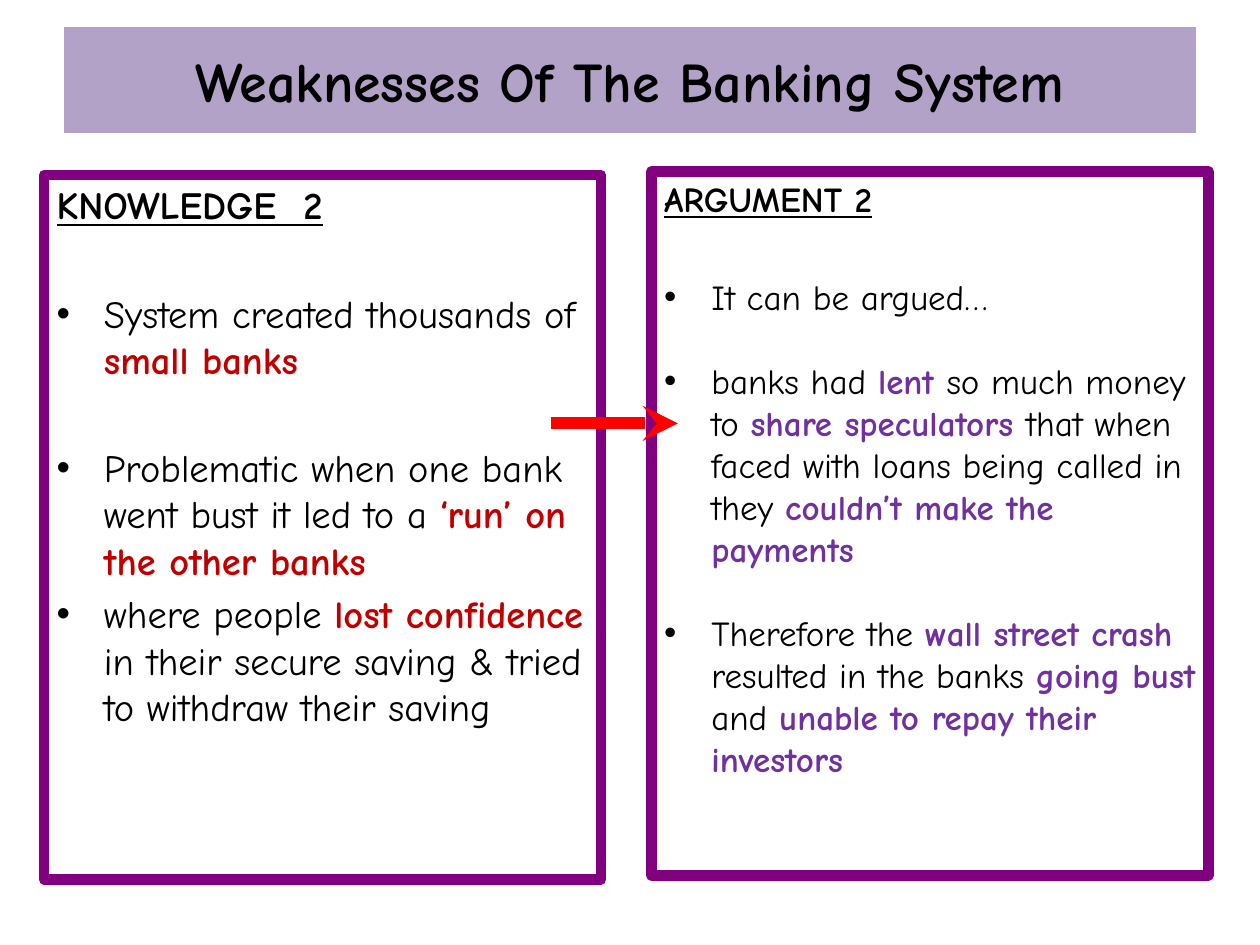
from dataclasses import dataclass

from pptx import Presentation
from pptx.dml.color import RGBColor
from pptx.enum.shapes import MSO_CONNECTOR
from pptx.enum.text import MSO_ANCHOR, MSO_AUTO_SIZE, PP_ALIGN
from pptx.oxml.ns import qn
from pptx.util import Inches, Pt

STRAIGHT = MSO_CONNECTOR.STRAIGHT
CENTER, MIDDLE, TOP = PP_ALIGN.CENTER, MSO_ANCHOR.MIDDLE, MSO_ANCHOR.TOP
NO_FIT = MSO_AUTO_SIZE.NONE
TWO_CONTENT = 3


@dataclass(frozen=True)
class Theme:
    font: str = "Comic Neue"
    text: RGBColor = RGBColor(0, 0, 0)
    white: RGBColor = RGBColor(255, 255, 255)
    banner: RGBColor = RGBColor(0xB3, 0xA2, 0xC7)
    frame: RGBColor = RGBColor(0x80, 0x00, 0x80)
    arrow: RGBColor = RGBColor(0xFF, 0x00, 0x00)
    knowledge: RGBColor = RGBColor(0xC0, 0x00, 0x00)
    argument: RGBColor = RGBColor(0x70, 0x30, 0xA0)
    title_size: int = 32
    knowledge_size: int = 22
    argument_size: int = 20


THEME = Theme()

# Each bullet: extra space before in points (None keeps the template's),
# then its text, where *asterisks* enclose the key words.
KNOWLEDGE = [
    (35.5, "System created thousands of *small banks*"),
    (35.5, "Problematic when one bank went bust it led to a "
           "*‘run’ on the other banks*"),
    (None, "where people *lost confidence* in their secure saving "
           "& tried to withdraw their saving"),
]
ARGUMENT = [
    (32, "It can be argued…"),
    (24, "banks had *lent *so much money to *share speculators *that when "
         "faced with loans being called in they *couldn’t make the payments*"),
    (24, "Therefore the *wall street crash *resulted in the banks "
         "*going bust *and *unable to repay their investors*"),
]


def place(sp, box):
    sp.left, sp.top, sp.width, sp.height = (Inches(v) for v in box)


def add_run(p, text, size, color=THEME.text, bold=False, underline=False):
    r = p.add_run()
    r.text = text
    f = r.font
    f.name, f.size, f.bold, f.underline = THEME.font, Pt(size), bold, underline
    f.color.rgb = color


def add_banner(s, box, text):
    sp = s.shapes.title
    place(sp, box)
    sp.fill.solid()
    sp.fill.fore_color.rgb = THEME.banner
    sp.line.color.rgb = THEME.white
    sp.line.width = Pt(0.75)
    tf = sp.text_frame
    tf.auto_size, tf.vertical_anchor = NO_FIT, MIDDLE
    p = tf.paragraphs[0]
    p.alignment = CENTER
    add_run(p, text, THEME.title_size, bold=True)


def add_panel(sp, box, heading, bullets, size, accent):
    """Fill a body placeholder with an underlined heading and bullets."""
    place(sp, box)
    sp.line.color.rgb = THEME.frame
    sp.line.width = Pt(6)
    tf = sp.text_frame
    tf.word_wrap, tf.auto_size, tf.vertical_anchor = True, NO_FIT, TOP
    p = tf.paragraphs[0]
    pPr = p._p.get_or_add_pPr()
    pPr.set("marL", "0")
    pPr.set("indent", "0")
    pPr.append(pPr.makeelement(qn("a:buNone"), {}))
    add_run(p, heading, size, bold=True, underline=True)
    for gap, text in bullets:
        p = tf.add_paragraph()
        if gap is not None:
            p.space_before = Pt(gap)
        for i, part in enumerate(text.split("*")):
            key = i % 2 == 1
            if part:
                add_run(p, part, size, accent if key else THEME.text, key)


def add_arrow(s, box):
    x, y, w, h = (Inches(v) for v in box)
    line = s.shapes.add_connector(STRAIGHT, x, y, x + w, y + h)
    line.line.color.rgb = THEME.arrow
    line.line.width = Pt(6.75)
    ln = line.line._get_or_add_ln()
    ln.append(ln.makeelement(qn("a:tailEnd"), {"type": "stealth"}))
    spPr = line._element.spPr
    spPr.append(spPr.makeelement(qn("a:effectLst"), {}))


def main():
    prs = Presentation()
    prs.slide_width, prs.slide_height = Inches(10), Inches(7.5)
    s = prs.slides.add_slide(prs.slide_layouts[TWO_CONTENT])
    add_banner(s, (0.5, 0.21, 9, 0.85), "Weaknesses Of The Banking System")
    add_panel(s.placeholders[1], (0.35, 1.39, 4.42, 5.59), "KNOWLEDGE  2",
              KNOWLEDGE, THEME.knowledge_size, THEME.knowledge)
    add_panel(s.placeholders[2], (5.17, 1.36, 4.42, 5.59), "ARGUMENT 2",
              ARGUMENT, THEME.argument_size, THEME.argument)
    add_arrow(s, (4.37, 3.36, 1.01, 0))
    prs.save("out.pptx")


if __name__ == "__main__":
    main()
